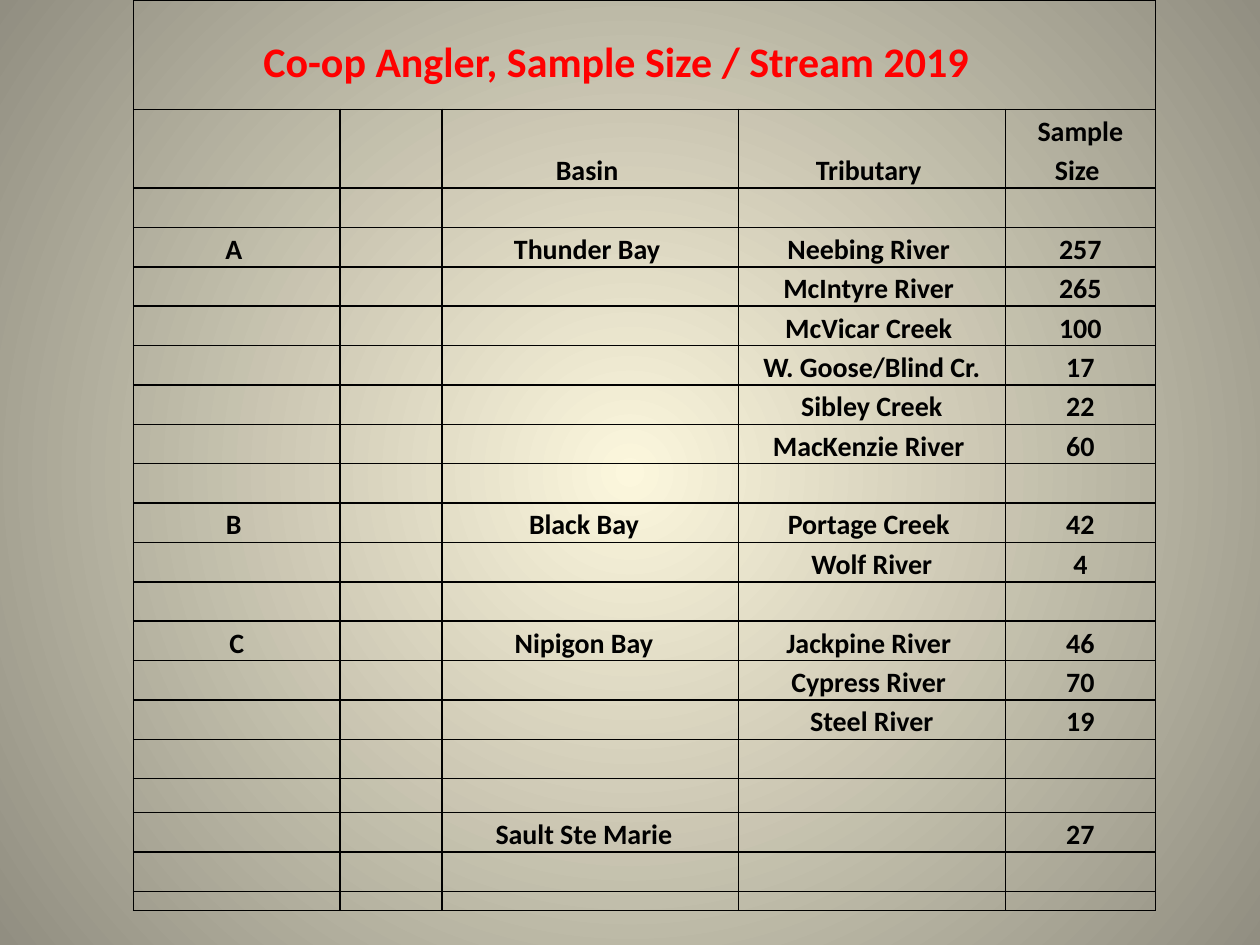
from typing import NamedTuple

import pptx
import pptx.dml.color
import pptx.enum.text
import pptx.oxml.ns
import pptx.oxml.xmlchemy
import pptx.util
from lxml import etree

Inches = pptx.util.Inches
Pt = pptx.util.Pt
RGBColor = pptx.dml.color.RGBColor
qn = pptx.oxml.ns.qn

BLACK = RGBColor(0x00, 0x00, 0x00)
RED = RGBColor(0xFF, 0x00, 0x00)
CREAM = RGBColor(0xFC, 0xF7, 0xDD)
TAUPE = RGBColor(0x91, 0x8E, 0x81)

FONT = "Calibri"
SLIDE_WIDTH, SLIDE_HEIGHT = Inches(10), Inches(7.5)
TABLE_LEFT = Inches(1.06)
COLUMN_INCHES = (1.64, 0.81, 2.35, 2.12, 1.19)
TITLE_INDENT = Inches(1.03)
SIDE_MARGIN = Inches(0.06)
HEADER_ROW = 2
LINE_POINTS = 22.5


class Record(NamedTuple):
    group: str = ""
    basin: str = ""
    tributary: str = ""
    size: str = ""
    height: float = LINE_POINTS

    def texts(self) -> tuple[str, ...]:
        return self.group, "", self.basin, self.tributary, self.size


TITLE = "Co-op Angler, Sample Size / Stream 2019"
RECORDS = (
    Record(height=51),
    Record(height=11.5),
    Record("", "Basin ", "Tributary ", "Sample Size ", 2 * LINE_POINTS),
    Record(),
    Record("A ", "Thunder Bay ", "Neebing River ", "257"),
    Record("", "", "McIntyre River ", "265"),
    Record("", "", "McVicar Creek ", "100"),
    Record("", "", "W. Goose/Blind Cr.", "17"),
    Record("", "", "Sibley Creek", "22"),
    Record("", "", "MacKenzie River ", "60"),
    Record(),
    Record("B ", "Black Bay  ", "Portage Creek ", "42"),
    Record("", "", "Wolf River", "4"),
    Record(),
    Record("C", "Nipigon Bay  ", "Jackpine River ", "46"),
    Record("", "", "Cypress River ", "70"),
    Record("", "", "Steel River", "19"),
    Record(),
    Record(height=19.5),
    Record("", "Sault Ste Marie  ", "", "27"),
    Record(),
    Record(height=11),
)


def paint_background(page: pptx.slide.Slide) -> None:
    fill = page.background.fill
    fill.gradient()
    for stop, color in zip(fill.gradient_stops, (CREAM, TAUPE)):
        stop.color.rgb = color
    linear = next(page._element.iter(qn("a:lin")))
    gradient = linear.getparent()
    gradient.remove(linear)
    circle = etree.SubElement(gradient, qn("a:path"), path="circle")
    etree.SubElement(circle, qn("a:fillToRect"), l="50000", t="50000", r="50000", b="50000")


def draw_borders(cell: pptx.table._Cell, row: int, column: int) -> None:
    inside = row >= HEADER_ROW
    sides = {
        "L": inside or column == 0,
        "R": inside or column == len(COLUMN_INCHES) - 1,
        "T": inside or row == 0,
        "B": row > 0,
    }
    properties = cell._tc.get_or_add_tcPr()
    for side, visible in sides.items():
        line = etree.SubElement(properties, qn(f"a:ln{side}"), w=str(Pt(1)))
        if visible:
            solid = etree.SubElement(line, qn("a:solidFill"))
            etree.SubElement(solid, qn("a:srgbClr"), val=str(BLACK))
        else:
            etree.SubElement(line, qn("a:noFill"))


def format_cell(cell: pptx.table._Cell, row: int, column: int) -> None:
    draw_borders(cell, row, column)
    cell.fill.background()
    cell.margin_left = cell.margin_right = SIDE_MARGIN
    cell.margin_top = cell.margin_bottom = 0
    cell.vertical_anchor = pptx.enum.text.MSO_ANCHOR.BOTTOM


def write_cell(
    cell: pptx.table._Cell,
    text: str,
    points: float = 16,
    color: RGBColor = BLACK,
    align: pptx.enum.text.PP_ALIGN = pptx.enum.text.PP_ALIGN.CENTER,
) -> None:
    para = cell.text_frame.paragraphs[0]
    if not text:
        para._p.get_or_add_endParaRPr().set("sz", "800")
        return
    para.alignment = align
    para.line_spacing = 1.15
    span = para.add_run()
    span.text = text
    span.font.name = FONT
    span.font.size = Pt(points)
    span.font.bold = True
    span.font.color.rgb = color


def add_sample_table(page: pptx.slide.Slide) -> None:
    width = Inches(sum(COLUMN_INCHES))
    height = Pt(sum(record.height for record in RECORDS))
    frame = page.shapes.add_table(
        len(RECORDS), len(COLUMN_INCHES), TABLE_LEFT, 0, width, height
    )
    table = frame.table
    table.first_row = table.horz_banding = False
    for column, inches in zip(table.columns, COLUMN_INCHES):
        column.width = Inches(inches)
    for row, record in enumerate(RECORDS):
        table.rows[row].height = Pt(record.height)
        for column, text in enumerate(record.texts()):
            cell = table.cell(row, column)
            format_cell(cell, row, column)
            if (row, column) != (0, 0):
                write_cell(cell, text)
    title = table.cell(0, 0)
    title.merge(table.cell(0, 3))
    title.margin_left = TITLE_INDENT
    write_cell(title, TITLE, 24, RED, pptx.enum.text.PP_ALIGN.LEFT)


def main() -> None:
    deck = pptx.Presentation()
    deck.slide_width, deck.slide_height = SLIDE_WIDTH, SLIDE_HEIGHT
    page = deck.slides.add_slide(deck.slide_layouts[6])
    paint_background(page)
    add_sample_table(page)
    deck.save("out.pptx")


if __name__ == "__main__":
    main()
